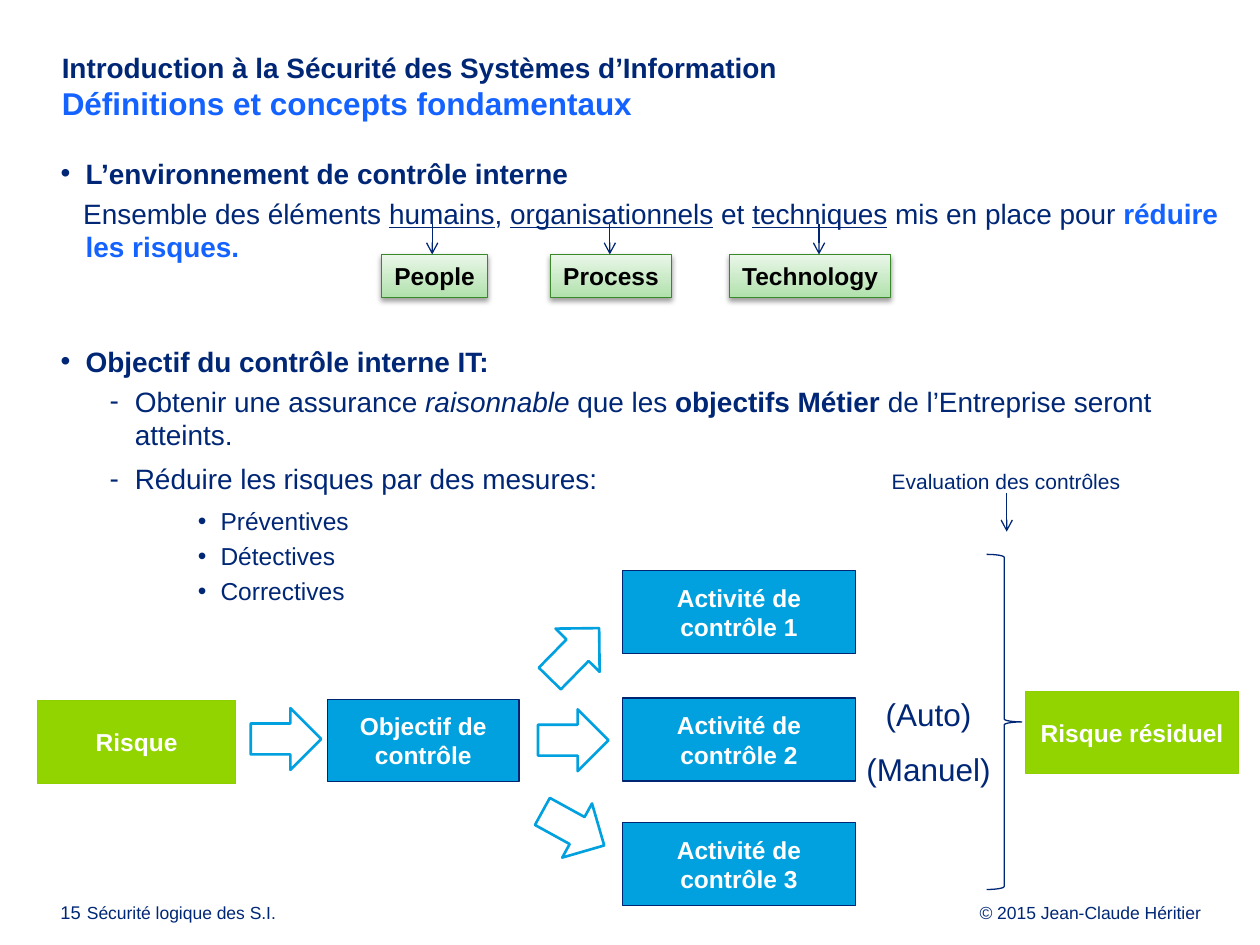
from pptx import Presentation
from pptx.dml.color import RGBColor
from pptx.enum.shapes import MSO_CONNECTOR, MSO_SHAPE
from pptx.enum.text import MSO_ANCHOR, MSO_AUTO_SIZE, PP_ALIGN
from pptx.oxml.ns import qn
from pptx.util import Inches, Pt
from lxml import etree

RECTANGLE, ARROW, BRACE = MSO_SHAPE.RECTANGLE, MSO_SHAPE.RIGHT_ARROW, MSO_SHAPE.RIGHT_BRACE
STRAIGHT = MSO_CONNECTOR.STRAIGHT
LEFT, CENTER, RIGHT = PP_ALIGN.LEFT, PP_ALIGN.CENTER, PP_ALIGN.RIGHT
TOP, MIDDLE = MSO_ANCHOR.TOP, MSO_ANCHOR.MIDDLE
FIXED = MSO_AUTO_SIZE.NONE

COLORS = {
    "navy": "002776", "edge": "002673", "accent": "1462FF", "cyan": "00A1DE",
    "lime": "92D400", "lime edge": "8FCF00", "green edge": "39892B",
    "green": "B1E1AD", "pale green": "EAF7E9", "white": "FFFFFF", "black": "000000",
}


class SlideBuilder:
    """Draws styled elements on a slide divided into 100 columns and 75 rows."""

    font_name = "Arial"

    def __init__(self, deck):
        self.deck = deck
        self.page = deck.slides.add_slide(deck.slide_layouts[1])

    def color(self, name):
        return RGBColor.from_string(COLORS[name])

    def area(self, column, row, columns, rows):
        width, height = self.deck.slide_width, self.deck.slide_height
        return (int(width * column / 100), int(height * row / 75),
                int(width * columns / 100), int(height * rows / 75))

    def style(self, font, size=None, color=None, bold=None, italic=None, underline=None):
        font.name = self.font_name
        if size:
            font.size = Pt(size)
        if color:
            font.color.rgb = self.color(color)
        if bold is not None:
            font.bold = bold
        if italic:
            font.italic = True
        if underline:
            font.underline = True

    def frame(self, shape, anchor=TOP, wrap=True, left=0):
        frame = shape.text_frame
        frame.auto_size, frame.word_wrap, frame.vertical_anchor = FIXED, wrap, anchor
        frame.margin_left = Inches(left)
        frame.margin_top = frame.margin_right = frame.margin_bottom = 0
        return frame

    def paragraphs(self, frame, lines, align=CENTER, after=0, spacing=None, **style):
        for index, line in enumerate(lines):
            para = frame.add_paragraph() if index else frame.paragraphs[0]
            para.text, para.alignment = line, align
            para.space_after = Pt(after)
            if spacing:
                para.line_spacing = Pt(spacing)
            self.style(para.font, **style)

    def place(self, placeholder, area):
        (placeholder.left, placeholder.top,
         placeholder.width, placeholder.height) = self.area(*area)
        return self.frame(placeholder, left=0.04)

    def title(self, area, lines):
        frame = self.place(self.page.shapes.title, area)
        para = frame.paragraphs[0]
        para.alignment = LEFT
        for index, (text, style) in enumerate(lines):
            if index:
                para.add_line_break()
            span = para.add_run()
            span.text = text
            self.style(span.font, bold=True, **style)

    def body(self, area, items):
        frame = self.place(self.page.placeholders[1], area)
        for index, (level, spans, options) in enumerate(items):
            para = frame.add_paragraph() if index else frame.paragraphs[0]
            self.list_item(para, spans, **level, **options)

    def list_item(self, para, spans, depth, margin, indent, bullet, after, style, before=0):
        para.level, para.alignment = depth, LEFT
        para.space_before, para.space_after = Pt(before), Pt(after)
        properties = para._p.get_or_add_pPr()
        properties.set("marL", str(Inches(margin)))
        properties.set("indent", str(Inches(indent)))
        if bullet:
            etree.SubElement(properties, qn("a:buFont"), typeface=self.font_name)
            etree.SubElement(properties, qn("a:buChar"), char=bullet)
        else:
            etree.SubElement(properties, qn("a:buNone"))
        self.style(para.font, **style)
        for text, changes in spans:
            span = para.add_run()
            span.text = text
            if changes:
                self.style(span.font, **changes)

    def text(self, area, lines, wrap=True, **style):
        box = self.page.shapes.add_textbox(*self.area(*area))
        self.paragraphs(self.frame(box, wrap=wrap), lines, color="navy", **style)

    def shape(self, kind, area, line, weight=0.75, fill=None, turn=0):
        shape = self.page.shapes.add_shape(kind, *self.area(*area))
        shape.shadow.inherit = False
        shape.rotation = turn
        shape.line.color.rgb, shape.line.width = self.color(line), Pt(weight)
        if fill:
            shape.fill.solid()
            shape.fill.fore_color.rgb = self.color(fill)
        else:
            shape.fill.background()
        return shape

    def block(self, area, text, fill="cyan", line="edge"):
        shape = self.shape(RECTANGLE, area, line, fill=fill)
        self.paragraphs(self.frame(shape, MIDDLE), [text], size=14, color="white", bold=True)

    def tag(self, area, text):
        shape = self.shape(RECTANGLE, area, "green edge")
        shape.fill.gradient()
        shape.fill.gradient_angle = 90
        for stop, name in zip(shape.fill.gradient_stops, ("green", "pale green")):
            stop.color.rgb = self.color(name)
        effects = shape._element.spPr.find(qn("a:effectLst"))
        shadow = etree.SubElement(effects, qn("a:outerShdw"), blurRad=str(Pt(3.1)),
                                  dist=str(Pt(1.6)), dir="5400000", rotWithShape="0")
        tint = etree.SubElement(shadow, qn("a:srgbClr"), val=COLORS["black"])
        etree.SubElement(tint, qn("a:alpha"), val="38000")
        self.paragraphs(self.frame(shape, MIDDLE, wrap=False), [text],
                        size=14, color="black", bold=True)

    def brace(self, area, curve):
        self.shape(BRACE, area, "navy").adjustments[0] = curve

    def down_arrow(self, column, row, rows):
        left, top, _, height = self.area(column, row, 0, rows)
        arrow = self.page.shapes.add_connector(STRAIGHT, left, top, left, top + height)
        arrow.line.color.rgb, arrow.line.width = self.color("edge"), Pt(0.75)
        properties = arrow._element.spPr
        etree.SubElement(properties.find(qn("a:ln")), qn("a:tailEnd"), type="arrow")
        etree.SubElement(properties, qn("a:effectLst"))


def main():
    deck = Presentation()
    deck.slide_width, deck.slide_height = Inches(10), Inches(7.5)
    slide = SlideBuilder(deck)

    slide.title((4.5, 4, 92.1, 6.9), [
        ("Introduction à la Sécurité des Systèmes d’Information", {"size": 16, "color": "navy"}),
        ("Définitions et concepts fondamentaux", {"size": 18, "color": "accent"}),
    ])

    plain = {"size": 16, "color": "navy", "bold": False}
    heading = dict(depth=0, margin=0.2, indent=-0.2, bullet="•", after=3.6,
                   style={**plain, "bold": True})
    sentence = {**heading, "indent": -0.02, "bullet": None, "style": plain}
    goal = dict(depth=2, margin=0.59, indent=-0.2, bullet="-", after=6, style=plain)
    measure = dict(depth=4, margin=1.27, indent=-0.18, bullet="•", after=3.3,
                   style={**plain, "size": 14})
    underlined = {"underline": True}
    slide.body((4.4, 12.4, 92.8, 57.5), [
        (heading, [("L’environnement de contrôle interne", {})], {}),
        (sentence, [
            ("Ensemble des éléments ", {}), ("humains", underlined), (", ", {}),
            ("organisationnels", underlined), (" et ", {}), ("techniques", underlined),
            (" mis en place pour ", {}),
            ("réduire les risques.", {"color": "accent", "bold": True})], {}),
        (heading, [("Objectif du contrôle interne IT:", {})], {"before": 42.6}),
        (goal, [
            ("Obtenir une assurance ", {}), ("raisonnable", {"italic": True}),
            (" que les ", {}), ("objectifs Métier ", {"bold": True}),
            ("de l’Entreprise seront atteints.", {})], {}),
        (goal, [("Réduire les risques par des mesures:", {})], {}),
        *[(measure, [(name, {})], {}) for name in ("Préventives", "Détectives", "Correctives")],
    ])

    slide.block((3, 55.6, 15.7, 6.6), "Risque", "lime", "lime edge")
    slide.block((26, 55.5, 15.2, 6.5), "Objectif de contrôle")
    for number, row in enumerate((45.3, 55.4, 65.3), 1):
        slide.block((49.4, row, 18.5, 6.6), f"Activité de\vcontrôle {number}")
    slide.block((81.4, 54.9, 16.9, 6.5), "Risque résiduel", "lime", "lime edge")

    for column, row, turn in ((19.9, 56.2, 0), (42.8, 49.4, 314.4),
                              (42.7, 56.3, 0), (42.7, 63.3, 28.8)):
        slide.shape(ARROW, (column, row, 5.6, 4.9), "cyan", 1.5, turn=turn)

    slide.text((67.7, 55.2, 12, 7.6), ["(Auto)", "(Manuel)"], wrap=False, after=9.5, size=18)
    slide.brace((78.3, 44, 2.8, 26.6), 0.084)
    slide.text((69.7, 37.2, 20.3, 2), ["Evaluation des contrôles"], wrap=False, size=12)
    slide.down_arrow(79.9, 39.1, 3.1)

    for text, column, columns, center in (("People", 30.3, 8.4, 34.3),
                                          ("Process", 43.7, 9.6, 48.4),
                                          ("Technology", 57.9, 12.8, 65)):
        slide.tag((column, 20.2, columns, 3.4), text)
        slide.down_arrow(center, 17.8, 2.4)

    for text, column, columns, align, size in (
            ("15", 4.8, 2.6, LEFT, 10.5),
            ("Sécurité logique des S.I.", 6.9, 25.3, LEFT, 10),
            ("© 2015 Jean-Claude Héritier", 70, 25.3, RIGHT, 10)):
        slide.text((column, 71.8, columns, 1.6), [text], align=align, spacing=10.8, size=size)

    deck.save("out.pptx")


if __name__ == "__main__":
    main()
